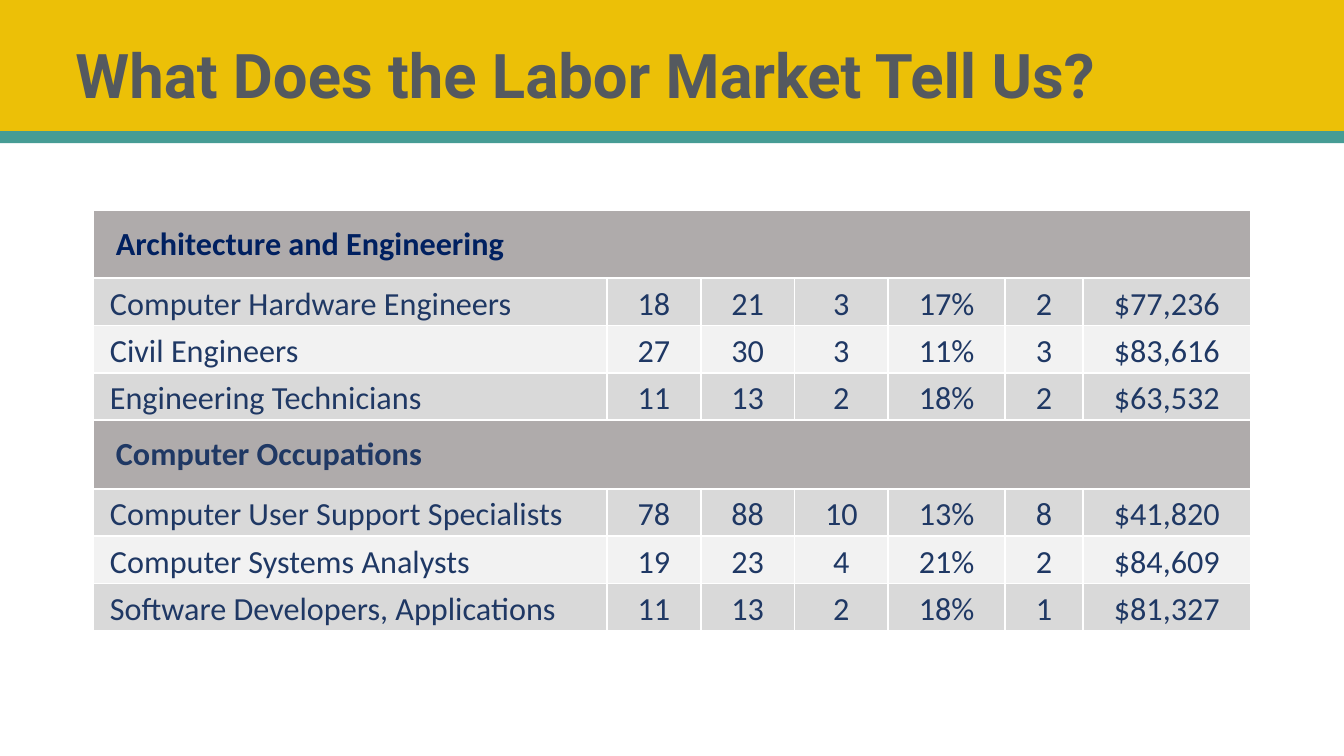
from lxml import etree
from pptx import Presentation
from pptx.dml.color import RGBColor
from pptx.enum.shapes import MSO_SHAPE
from pptx.enum.text import MSO_ANCHOR, PP_ALIGN
from pptx.oxml.ns import qn
from pptx.util import Pt

RECTANGLE = MSO_SHAPE.RECTANGLE
TOP, MIDDLE = MSO_ANCHOR.TOP, MSO_ANCHOR.MIDDLE
LEFT, CENTER = PP_ALIGN.LEFT, PP_ALIGN.CENTER

PX = 9144  # 100 px to the inch
SLIDE_SIZE = (1333, 750)

TITLE = "What Does the Labor Market Tell Us?"
TITLE_BOX = (65, 5, 1150, 145)
BANDS = [((0, 0, 1333, 141), "ECC007"), ((0, 130, 1333, 12), "469C95")]

SECTIONS = [
    ("Architecture and Engineering", "002060", [
        ("Computer Hardware Engineers", "18", "21", "3", "17%", "2", "$77,236"),
        ("Civil Engineers", "27", "30", "3", "11%", "3", "$83,616"),
        ("Engineering Technicians", "11", "13", "2", "18%", "2", "$63,532"),
    ]),
    ("Computer Occupations", "1F3864", [
        ("Computer User Support Specialists", "78", "88", "10", "13%", "8", "$41,820"),
        ("Computer Systems Analysts", "19", "23", "4", "21%", "2", "$84,609"),
        ("Software Developers, Applications", "11", "13", "2", "18%", "1", "$81,327"),
    ]),
]
TABLE_LEFT, TABLE_TOP = 92, 208
COLUMN_WIDTHS = [510, 93, 93, 93, 116, 77, 167]
SECTION_HEIGHT, JOB_HEIGHT = 68, 47
SECTION_MARGINS, JOB_MARGINS = (23, 12, 23, 12), (17, 2, 17, 0)
SECTION_FILL, JOB_FILLS = "AFABAB", ("D9D9D9", "F2F2F2")
JOB_COLOR, BORDER_COLOR = "1F3864", "FFFFFF"


def px(*lengths):
    return [length * PX for length in lengths]


def rgb(color):
    return RGBColor.from_string(color)


def write(frame, text, size=23, font="Calibri", color=JOB_COLOR, bold=False,
          align=LEFT, spacing=1.07):
    paragraph = frame.paragraphs[0]
    paragraph.alignment = align
    paragraph.line_spacing = spacing
    run = paragraph.add_run()
    run.text = text
    run.font.size, run.font.name, run.font.bold = Pt(size), font, bold
    run.font.color.rgb = rgb(color)


def style_cell(cell, fill, margins, anchor):
    cell.fill.solid()
    cell.fill.fore_color.rgb = rgb(fill)
    (cell.margin_left, cell.margin_top,
     cell.margin_right, cell.margin_bottom) = px(*margins)
    cell.vertical_anchor = anchor
    properties = cell._tc.get_or_add_tcPr()
    for place, side in enumerate(("lnL", "lnR", "lnT", "lnB")):
        border = etree.Element(qn(f"a:{side}"), w=str(Pt(1.5)))
        border_fill = etree.SubElement(border, qn("a:solidFill"))
        etree.SubElement(border_fill, qn("a:srgbClr"), val=BORDER_COLOR)
        properties.insert(place, border)


def add_band(slide, box, color):
    band = slide.shapes.add_shape(RECTANGLE, *px(*box))
    band.shadow.inherit = False
    band.fill.solid()
    band.fill.fore_color.rgb = rgb(color)
    band.line.fill.background()


def add_title(slide):
    frame = slide.shapes.add_textbox(*px(*TITLE_BOX)).text_frame
    frame.word_wrap = True
    frame.vertical_anchor = MIDDLE
    write(frame, TITLE, size=44, font="Roboto", color="54595F", bold=True, spacing=0.9)


def add_job_table(slide):
    heights = []
    for _, _, jobs in SECTIONS:
        heights += [SECTION_HEIGHT] + [JOB_HEIGHT] * len(jobs)
    table = slide.shapes.add_table(
        len(heights), len(COLUMN_WIDTHS),
        *px(TABLE_LEFT, TABLE_TOP, sum(COLUMN_WIDTHS), sum(heights))).table
    table.first_row = table.horz_banding = False
    for column, width in zip(table.columns, px(*COLUMN_WIDTHS)):
        column.width = width
    for row, height in zip(table.rows, px(*heights)):
        row.height = height

    rows = iter(table.rows)
    for heading, heading_color, jobs in SECTIONS:
        cells = list(next(rows).cells)
        for cell in cells:
            style_cell(cell, SECTION_FILL, SECTION_MARGINS, TOP)
        cells[0].merge(cells[-1])
        write(cells[0].text_frame, heading, color=heading_color, bold=True)
        for index, job in enumerate(jobs):
            for column, (cell, value) in enumerate(zip(next(rows).cells, job)):
                style_cell(cell, JOB_FILLS[index % 2], JOB_MARGINS, MIDDLE)
                write(cell.text_frame, value, align=CENTER if column else LEFT)


def main():
    deck = Presentation()
    deck.slide_width, deck.slide_height = px(*SLIDE_SIZE)
    slide = deck.slides.add_slide(deck.slide_layouts[6])
    for box, color in BANDS:
        add_band(slide, box, color)
    add_job_table(slide)
    add_title(slide)
    deck.save("out.pptx")


if __name__ == "__main__":
    main()
